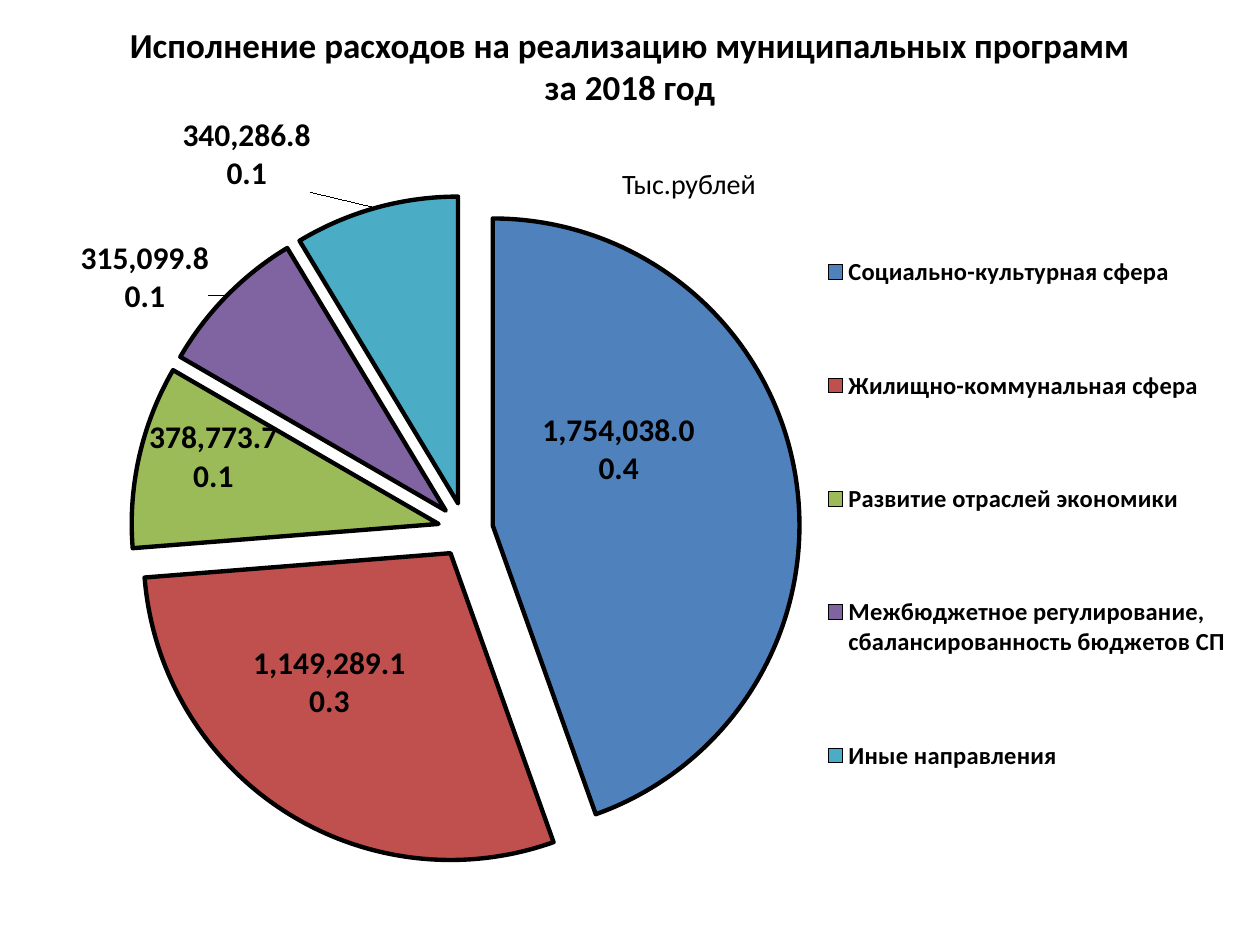
from dataclasses import dataclass
from typing import Any

from lxml.etree import SubElement
from pptx import Presentation
from pptx.chart.data import CategoryChartData
from pptx.dml.color import RGBColor
from pptx.enum.chart import XL_CHART_TYPE, XL_LABEL_POSITION, XL_LEGEND_POSITION
from pptx.enum.text import MSO_ANCHOR, PP_ALIGN
from pptx.oxml.ns import qn
from pptx.util import Cm, Pt

NUMBER_FORMAT = "#,##0.0"
INSIDE = XL_LABEL_POSITION.CENTER
OUTSIDE = XL_LABEL_POSITION.OUTSIDE_END


@dataclass
class Sector:
    name: str
    amount: float
    fill: str
    position: Any
    shift: tuple[float, float]


SECTORS = [
    Sector("Социально-культурная сфера", 1754038.0, "4F81BD", INSIDE, (-0.02, -0.06)),
    Sector("Жилищно-коммунальная сфера", 1149289.1, "C0504D", INSIDE, (-0.03, 0)),
    Sector("Развитие отраслей экономики", 378773.7, "9BBB59", INSIDE, (-0.06, -0.04)),
    Sector("Межбюджетное регулирование, сбалансированность бюджетов СП",
           315099.8, "8064A2", OUTSIDE, (-0.01, 0.03)),
    Sector("Иные направления", 340286.8, "4BACC6", OUTSIDE, (-0.05, -0.01)),
]


def color(value: str) -> RGBColor:
    return RGBColor.from_string(value)


def format_font(font: Any, size: float, bold: bool = False) -> None:
    for name, value in {"name": "Calibri", "size": Pt(size), "bold": bold}.items():
        setattr(font, name, value)
    font.color.rgb = color("000000")


def add_value(parent: Any, tag: str, value: Any) -> None:
    SubElement(parent, qn(tag)).set("val", str(value))


def set_layout(element: Any, index: int, **parts: Any) -> None:
    """Insert a manual chart layout as the child of element at index."""
    for old in element.findall(qn("c:layout")):
        element.remove(old)
    layout = SubElement(element, qn("c:layout"))
    manual = SubElement(layout, qn("c:manualLayout"))
    for tag, value in parts.items():
        add_value(manual, f"c:{tag}", value)
    element.insert(index, layout)


def format_sector(point: Any, sector: Sector) -> None:
    point.format.fill.solid()
    point.format.fill.fore_color.rgb = color(sector.fill)
    point.format.line.color.rgb = color("000000")
    point.format.line.width = Pt(2.5)
    format_font(point.data_label.font, 18, True)
    point.data_label.position = sector.position


def format_label(label: Any, sector: Sector) -> None:
    """Show amount and share on two lines, shifted from the default place."""
    set_layout(label, 1, x=sector.shift[0], y=sector.shift[1])
    number = SubElement(label, qn("c:numFmt"))
    number.set("formatCode", NUMBER_FORMAT)
    number.set("sourceLinked", "0")
    label.insert(2, number)
    label.find(qn("c:showPercent")).set("val", "1")
    SubElement(label, qn("c:separator")).text = "\n"


def add_pie(page: Any) -> None:
    data = CategoryChartData(number_format=NUMBER_FORMAT)
    data.categories = [sector.name for sector in SECTORS]
    data.add_series("Series 1", [sector.amount for sector in SECTORS])
    chart = page.shapes.add_chart(XL_CHART_TYPE.PIE, 0, Cm(2.34), Cm(25.4),
                                  Cm(16.71), data).chart
    format_font(chart.font, 18)
    chart.has_title = False
    chart.has_legend = True
    legend = chart.legend
    legend.position = XL_LEGEND_POSITION.RIGHT
    legend.include_in_layout = False
    format_font(legend.font, 14, True)
    set_layout(legend._element, 1, xMode="edge", yMode="edge",
               x=0.64, y=0.07, w=0.35, h=0.82)

    plot = chart.plots[0]
    plot.vary_by_categories = True
    series = plot.series[0]
    for index, sector in enumerate(SECTORS):
        format_sector(series.points[index], sector)
    for label, sector in zip(series._element.iter(qn("c:dLbl")), SECTORS):
        format_label(label, sector)
    explosion = SubElement(series._element, qn("c:explosion"))
    explosion.set("val", "9")
    series._element.find(qn("c:dPt")).addprevious(explosion)

    plot_area = plot._element.getparent()
    set_layout(plot_area, 0, layoutTarget="inner", xMode="edge", yMode="edge",
               x=0.104, y=0.096, w=0.531, h=0.807)


def add_title(page: Any) -> None:
    title = page.shapes.title
    place = {"left": 0, "top": Cm(0.33), "width": Cm(25.4), "height": Cm(2)}
    for name, value in place.items():
        setattr(title, name, value)
    title.text_frame.vertical_anchor = MSO_ANCHOR.MIDDLE
    para = title.text_frame.paragraphs[0]
    para.text = "Исполнение расходов на реализацию муниципальных программ\vза 2018 год"
    para.alignment = PP_ALIGN.CENTER
    for span in para.runs:
        format_font(span.font, 20, True)


def add_unit_note(page: Any) -> None:
    box = page.shapes.add_textbox(Cm(12.29), Cm(3.23), Cm(4.19), Cm(0.94))
    box.text_frame.word_wrap = True
    span = box.text_frame.paragraphs[0].add_run()
    span.text = "Тыс.рублей"
    format_font(span.font, 16)


def main() -> None:
    deck = Presentation()
    deck.slide_width, deck.slide_height = Cm(25.4), Cm(19.05)
    page = deck.slides.add_slide(deck.slide_layouts[5])
    add_title(page)
    add_pie(page)
    add_unit_note(page)
    deck.save("out.pptx")


if __name__ == "__main__":
    main()
